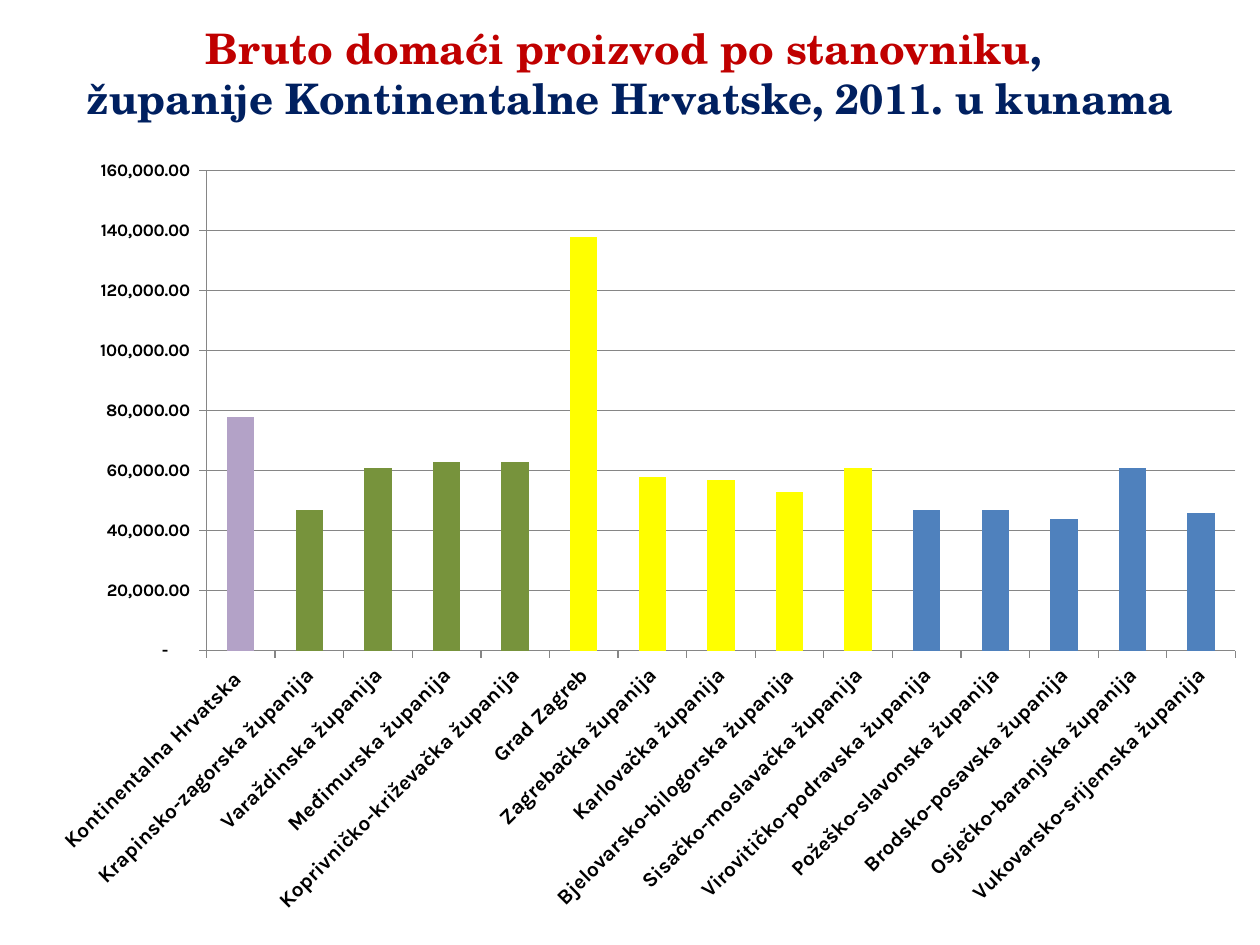
"""Build the slide on gross domestic product per inhabitant by county."""
from pptx import Presentation
from pptx.chart.data import CategoryChartData
from pptx.dml.color import RGBColor
from pptx.enum import chart as ch, text
from pptx.oxml import parse_xml
from pptx.oxml.ns import nsdecls
from pptx.util import Pt

PURPLE, GREEN, YELLOW, BLUE = "B3A2C7", "77933C", "FFFF00", "4F81BD"
COUNTIES = [
    ("Kontinentalna Hrvatska ", 78000, PURPLE),
    ("Krapinsko-zagorska županija", 47000, GREEN),
    ("Varaždinska županija", 61000, GREEN),
    ("Međimurska županija", 63000, GREEN),
    ("Koprivničko-križevačka županija", 63000, GREEN),
    ("Grad Zagreb", 138000, YELLOW),
    ("Zagrebačka županija", 58000, YELLOW),
    ("Karlovačka županija", 57000, YELLOW),
    ("Bjelovarsko-bilogorska županija", 53000, YELLOW),
    ("Sisačko-moslavačka županija", 61000, YELLOW),
    ("Virovitičko-podravska županija", 47000, BLUE),
    ("Požeško-slavonska županija", 47000, BLUE),
    ("Brodsko-posavska županija", 44000, BLUE),
    ("Osječko-baranjska županija", 61000, BLUE),
    ("Vukovarsko-srijemska županija", 46000, BLUE),
]
NUMBER_FORMAT = r'_(* #,##0.00_);_(* \(#,##0.00\);_(* "-"??_);_(@_)'


def rgb(value):
    return RGBColor.from_string(value)


class Deck:
    """Hold the style and the current slide."""

    title_font, chart_font = "TeX Gyre Schola", "Karla"
    red, navy, black, grey, white = "C00000", "002060", "000000", "868686", "FFFFFF"

    def __init__(self, prs):
        self.s = prs.slides.add_slide(prs.slide_layouts[5])

    def fill(self, target, color):
        target.fill.solid()
        target.fill.fore_color.rgb = rgb(color)

    def font(self, font, name, size, color, bold=True):
        font.name, font.size, font.bold = name, Pt(size), bold
        font.color.rgb = rgb(color)

    def line(self, line):
        line.color.rgb = rgb(self.grey)
        line.width = Pt(0.75)

    def title(self, box, lines):
        sp = self.s.shapes.title
        sp.left, sp.top, sp.width, sp.height = map(Pt, box)
        self.fill(sp, self.white)
        tf = sp.text_frame
        tf.word_wrap = True
        tf.auto_size = text.MSO_AUTO_SIZE.NONE
        tf.vertical_anchor = text.MSO_ANCHOR.MIDDLE
        p = tf.paragraphs[0]
        p.alignment = text.PP_ALIGN.CENTER
        for i, runs in enumerate(lines):
            if i:
                p.add_line_break()
            for words, color in runs:
                r = p.add_run()
                r.text = words
                self.font(r.font, self.title_font, 24, color)

    def axis(self, axis, size):
        axis.major_tick_mark = ch.XL_TICK_MARK.OUTSIDE
        axis.minor_tick_mark = ch.XL_TICK_MARK.NONE
        self.line(axis.format.line)
        self.font(axis.tick_labels.font, self.chart_font, size, self.black)

    def plot_area(self, chart, box, inner):
        area = chart._chartSpace.chart.plotArea
        for old in area.xpath("c:layout"):
            area.remove(old)
        sizes = box[2:] * 2
        parts = "".join(f'<c:{k} val="{v / size:.5f}"/>'
                        for k, v, size in zip("xywh", inner, sizes))
        area.insert(0, parse_xml(
            f'<c:layout {nsdecls("c")}><c:manualLayout><c:layoutTarget val="inner"/>'
            f'<c:xMode val="edge"/><c:yMode val="edge"/>{parts}'
            '</c:manualLayout></c:layout>'))

    def columns(self, box, inner, rows):
        names, values, colors = zip(*rows)
        data = CategoryChartData(number_format=NUMBER_FORMAT)
        data.categories = names
        data.add_series("Series 1", values)
        chart = self.s.shapes.add_chart(
            ch.XL_CHART_TYPE.COLUMN_CLUSTERED, *map(Pt, box), data).chart
        chart.has_legend = chart.has_title = False
        self.font(chart.font, self.chart_font, 10, self.black, False)
        chart._chartSpace.chart.addnext(parse_xml(
            f'<c:spPr {nsdecls("c", "a")}><a:solidFill><a:srgbClr val="{self.white}"/>'
            '</a:solidFill><a:ln><a:noFill/></a:ln></c:spPr>'))
        self.plot_area(chart, box, inner)
        plot = chart.plots[0]
        plot.gap_width, plot.vary_by_categories = 150, False
        series = plot.series[0]
        self.fill(series.format, BLUE)
        for i, color in enumerate(colors):
            if color != BLUE:
                self.fill(series.points[i].format, color)
        cat, val = chart.category_axis, chart.value_axis
        self.axis(cat, 12)
        cat._element.xpath("c:txPr/a:bodyPr")[0].set("rot", "-2700000")
        self.axis(val, 10)
        val.minimum_scale, val.maximum_scale, val.major_unit = 0, 160000, 20000
        val.has_major_gridlines = True
        self.line(val.major_gridlines.format.line)
        val.tick_labels.number_format = NUMBER_FORMAT
        val.tick_labels.number_format_is_linked = False


def main():
    prs = Presentation()
    prs.slide_width, prs.slide_height = Pt(720), Pt(540)
    deck = Deck(prs)
    deck.title((0, 0, 720, 83), [
        [("Bruto domaći proizvod po stanovniku", deck.red), (", ", deck.navy)],
        [("županije Kontinentalne Hrvatske, 2011. u kunama", deck.navy)],
    ])
    deck.columns((20, 83, 700, 448), (98, 14.5, 588, 274.3), COUNTIES)
    prs.save("out.pptx")


if __name__ == "__main__":
    main()
